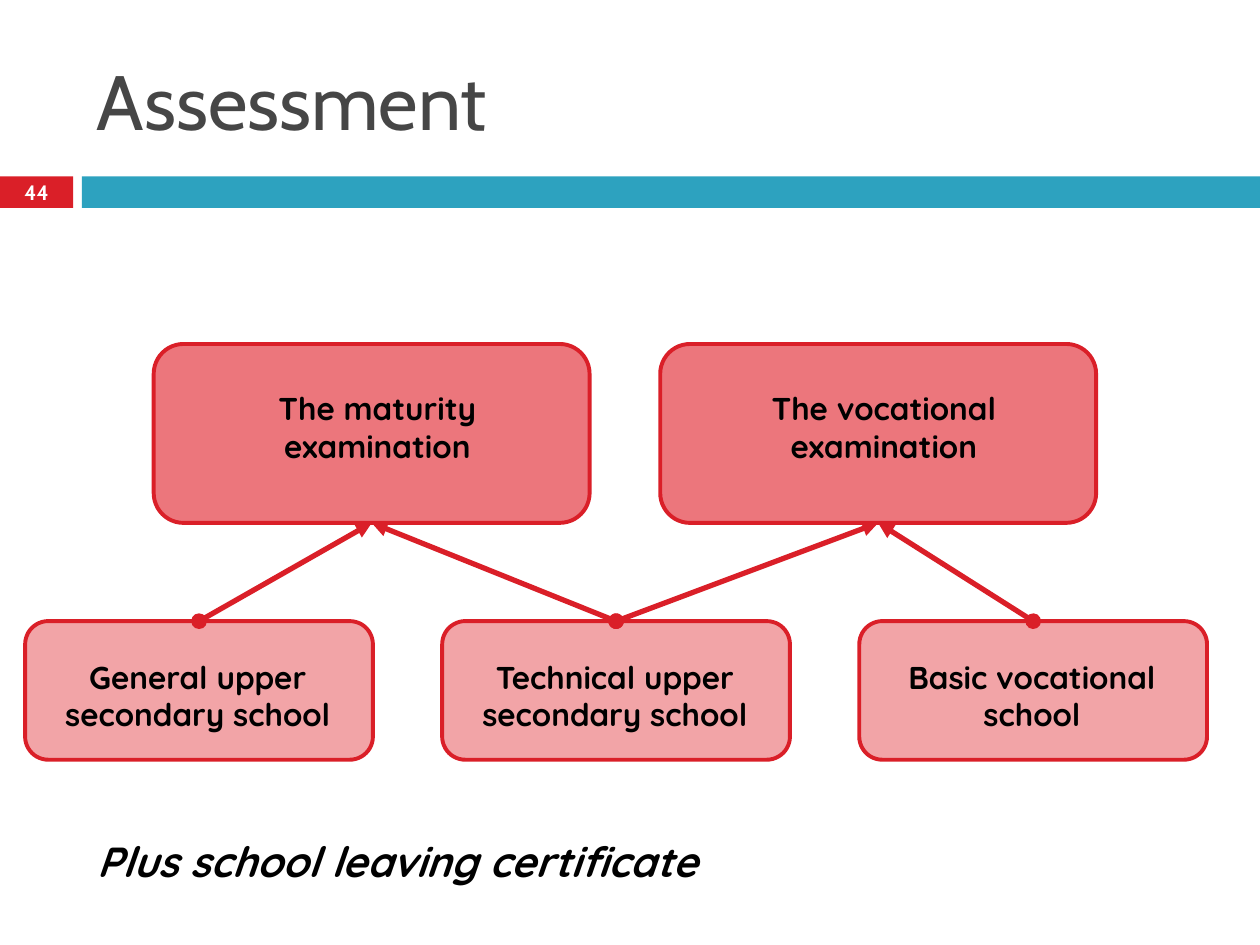
"""Build the Assessment slide: school types linked to their final examinations."""
from dataclasses import dataclass

from lxml import etree
from pptx import Presentation
from pptx.dml.color import RGBColor
from pptx.enum.shapes import MSO_CONNECTOR, MSO_SHAPE
from pptx.enum.text import MSO_ANCHOR, MSO_AUTO_SIZE, PP_ALIGN
from pptx.oxml.ns import qn
from pptx.shapes.autoshape import Shape
from pptx.shapes.shapetree import SlideShapes
from pptx.util import Emu, Pt

RECT, ROUND = MSO_SHAPE.RECTANGLE, MSO_SHAPE.ROUNDED_RECTANGLE
STRAIGHT = MSO_CONNECTOR.STRAIGHT
LEFT, CENTER = PP_ALIGN.LEFT, PP_ALIGN.CENTER
TOP, MIDDLE = MSO_ANCHOR.TOP, MSO_ANCHOR.MIDDLE
GROW, FIXED = MSO_AUTO_SIZE.SHAPE_TO_FIT_TEXT, MSO_AUTO_SIZE.NONE

RED = RGBColor(0xDA, 0x1F, 0x28)
TEAL = RGBColor(0x2D, 0xA2, 0xBF)
ROSE = RGBColor(0xEC, 0x76, 0x7C)
PINK = RGBColor(0xF2, 0xA4, 0xA7)
GREY = RGBColor(0x46, 0x46, 0x46)
BLACK = RGBColor(0, 0, 0)
WHITE = RGBColor(0xFF, 0xFF, 0xFF)

SCALE = 9144


@dataclass(frozen=True)
class Box:
    left: int
    top: int
    width: int
    height: int

    def emu(self) -> list[Emu]:
        return [Emu(n * SCALE) for n in (self.left, self.top, self.width, self.height)]


@dataclass(frozen=True)
class Row:
    first: Box
    pitch: int
    fill: RGBColor
    label: Box
    names: tuple[str, ...]

    def shift(self, box: Box, col: int) -> Box:
        return Box(box.left + col * self.pitch, box.top, box.width, box.height)


@dataclass(frozen=True)
class Style:
    size: float
    color: RGBColor
    name: str = "Quicksand"
    bold: bool = True
    italic: bool = False
    align: PP_ALIGN = CENTER
    anchor: MSO_ANCHOR = TOP
    fit: MSO_AUTO_SIZE = GROW


HEAD = Style(44, GREY, "Cabin", bold=False, align=LEFT, anchor=MIDDLE, fit=FIXED)
PAGE = Style(11.9, WHITE, "Cabin", anchor=MIDDLE, fit=FIXED)
LABEL = Style(18, BLACK)
NOTE = Style(24, BLACK, italic=True, align=LEFT)

EXAMS = Row(Box(122, 273, 346, 142), 402, ROSE, Box(146, 304, 307, 71),
            ("The maturity examination", "The vocational examination"))
SCHOOLS = Row(Box(20, 493, 276, 110), 331, PINK, Box(35, 517, 244, 71),
              ("General upper secondary school", "Technical upper secondary school",
               "Basic vocational school"))
LINKS = ((0, 0), (1, 0), (1, 1), (2, 1))
BARS = ((Box(0, 140, 58, 25), RED), (Box(65, 140, 935, 25), TEAL))


def draw_shape(shapes: SlideShapes, kind: MSO_SHAPE, box: Box, fill: RGBColor) -> Shape:
    shape = shapes.add_shape(kind, *box.emu())
    shape.shadow.inherit = False
    shape.fill.solid()
    shape.fill.fore_color.rgb = fill
    shape.line.fill.background()
    return shape


def draw_cards(shapes: SlideShapes, row: Row) -> list[Shape]:
    cards = []
    for col in range(len(row.names)):
        card = draw_shape(shapes, ROUND, row.shift(row.first, col), row.fill)
        card.line.color.rgb = RED
        card.line.width = Pt(2.25)
        cards.append(card)
    return cards


def draw_text(shapes: SlideShapes, box: Box, text: str, style: Style) -> None:
    frame = shapes.add_textbox(*box.emu()).text_frame
    form = {"word_wrap": True, "auto_size": style.fit, "vertical_anchor": style.anchor}
    for key, value in form.items():
        setattr(frame, key, value)
    para = frame.paragraphs[0]
    para.alignment = style.align
    run = para.add_run()
    run.text = text
    form = {"size": Pt(style.size), "name": style.name,
            "bold": style.bold, "italic": style.italic}
    for key, value in form.items():
        setattr(run.font, key, value)
    run.font.color.rgb = style.color


def draw_link(shapes: SlideShapes, start: Shape, end: Shape) -> None:
    link = shapes.add_connector(STRAIGHT, 0, 0, 0, 0)
    link.begin_connect(start, 0)
    link.end_connect(end, 2)
    link.line.color.rgb = RED
    link.line.width = Pt(3)
    props = link._element.spPr
    line = props.find(qn("a:ln"))
    for tag, kind in (("a:headEnd", "oval"), ("a:tailEnd", "triangle")):
        etree.SubElement(line, qn(tag), type=kind)
    etree.SubElement(props, qn("a:effectLst"))


def main() -> None:
    deck = Presentation()
    deck.slide_width, deck.slide_height = Emu(1000 * SCALE), Emu(750 * SCALE)
    shapes = deck.slides.add_slide(deck.slide_layouts[6]).shapes
    for box, fill in BARS:
        draw_shape(shapes, RECT, box, fill)
    draw_text(shapes, Box(67, 25, 892, 108), "Assessment", HEAD)
    draw_text(shapes, Box(0, 139, 58, 27), "44", PAGE)
    exams, schools = draw_cards(shapes, EXAMS), draw_cards(shapes, SCHOOLS)
    for school, exam in LINKS:
        draw_link(shapes, schools[school], exams[exam])
    for row in (SCHOOLS, EXAMS):
        for col, name in enumerate(row.names):
            draw_text(shapes, row.shift(row.label, col), name, LABEL)
    draw_text(shapes, Box(67, 658, 583, 50), "Plus school leaving certificate", NOTE)
    deck.save("out.pptx")


if __name__ == "__main__":
    main()
